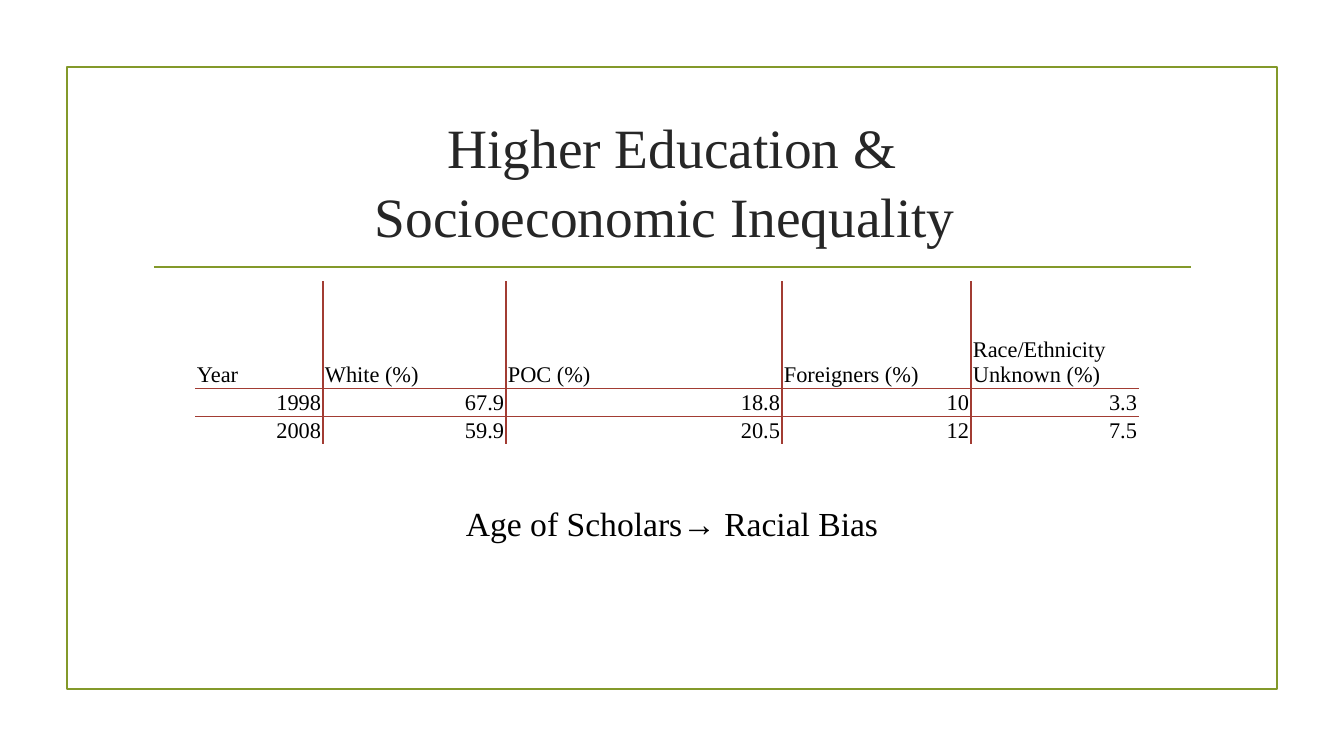
from lxml import etree
from pptx import Presentation
from pptx.dml.color import RGBColor
from pptx.enum.shapes import MSO_CONNECTOR, MSO_SHAPE
from pptx.enum.text import MSO_ANCHOR, PP_ALIGN
from pptx.oxml.ns import qn
from pptx.util import Pt

LEFT, CENTER, RIGHT = PP_ALIGN.LEFT, PP_ALIGN.CENTER, PP_ALIGN.RIGHT
MIDDLE, BOTTOM = MSO_ANCHOR.MIDDLE, MSO_ANCHOR.BOTTOM
RECT, STRAIGHT = MSO_SHAPE.RECTANGLE, MSO_CONNECTOR.STRAIGHT
SCALE = 12192000 / 1344
OLIVE, RED = "83992A", "A23C33"


def px(*values):
    return [round(v * SCALE) for v in values]


def write(tf, text, size=16, color="000000", align=LEFT, spacing=None):
    p = tf.paragraphs[0]
    p.text = text
    p.alignment = align
    p.line_spacing = spacing
    for r in p.runs:
        r.font.name = "Times New Roman"
        r.font.size = Pt(size)
        r.font.color.rgb = RGBColor.from_string(color)


prs = Presentation()
prs.slide_width, prs.slide_height = px(1344, 756)
s = prs.slides.add_slide(prs.slide_layouts[5])

# Frame and rule
frame = s.shapes.add_shape(RECT, *px(67, 67, 1210, 622))
frame.shadow.inherit = False
frame.fill.background()
rule = s.shapes.add_connector(STRAIGHT, *px(154, 267, 1191, 267))
etree.SubElement(rule._element.spPr, qn("a:effectLst"))
for sp in (frame, rule):
    sp.line.color.rgb = RGBColor.from_string(OLIVE)
    sp.line.width = Pt(1.25)

# Title
title = s.shapes.title
title.left, title.top, title.width, title.height = px(143, 108, 1058, 144)
tf = title.text_frame
tf.word_wrap = True
tf.vertical_anchor = MIDDLE
write(tf, "Higher Education &\vSocioeconomic Inequality ", size=39.6,
      color="262626", align=CENTER, spacing=1.03)

# Table: an empty merged row, the headings, then one row per year
ROWS = [
    ["", "", "", "", ""],
    ["Year", "White (%)", "POC (%)", "Foreigners (%)", "Race/Ethnicity Unknown (%)"],
    ["1998", "67.9", "18.8", "10", "3.3"],
    ["2008", "59.9", "20.5", "12", "7.5"],
]
table = s.shapes.add_table(4, 5, *px(195, 252, 944, 191)).table
table.first_row = table.horz_banding = False
for col, w in zip(table.columns, px(128, 183, 276, 189, 168)):
    col.width = w
for row, h in zip(table.rows, px(28, 107, 28, 28)):
    row.height = h
table.cell(0, 0).merge(table.cell(0, 4))

for i, row in enumerate(ROWS):
    for j, text in enumerate(row):
        cell = table.cell(i, j)
        cell.margin_left, cell.margin_right = px(2, 2)
        cell.margin_top, cell.margin_bottom = px(1, 1)
        cell.vertical_anchor = BOTTOM
        write(cell.text_frame, text, align=RIGHT if i > 1 else LEFT)
        if not text:
            p = cell.text_frame.paragraphs[0]
            etree.SubElement(p._p, qn("a:endParaRPr"), sz="1600")
        # Inner grid lines only
        edges = {"lnL": i > 0 and j > 0, "lnR": i > 0 and j < 4,
                 "lnT": i > 1, "lnB": 0 < i < 3}
        for tag, shown in edges.items():
            ln = etree.SubElement(cell._tc.get_or_add_tcPr(), qn("a:" + tag), w="12700")
            if shown:
                fill = etree.SubElement(ln, qn("a:solidFill"))
                etree.SubElement(fill, qn("a:srgbClr"), val=RED)
            else:
                etree.SubElement(ln, qn("a:noFill"))
        cell.fill.background()

# Closing statement
box = s.shapes.add_textbox(*px(456, 498, 928 - 40, 82))
box.text_frame.word_wrap = True
write(box.text_frame, "Age of Scholars→ Racial Bias", size=24)

prs.save("out.pptx")
